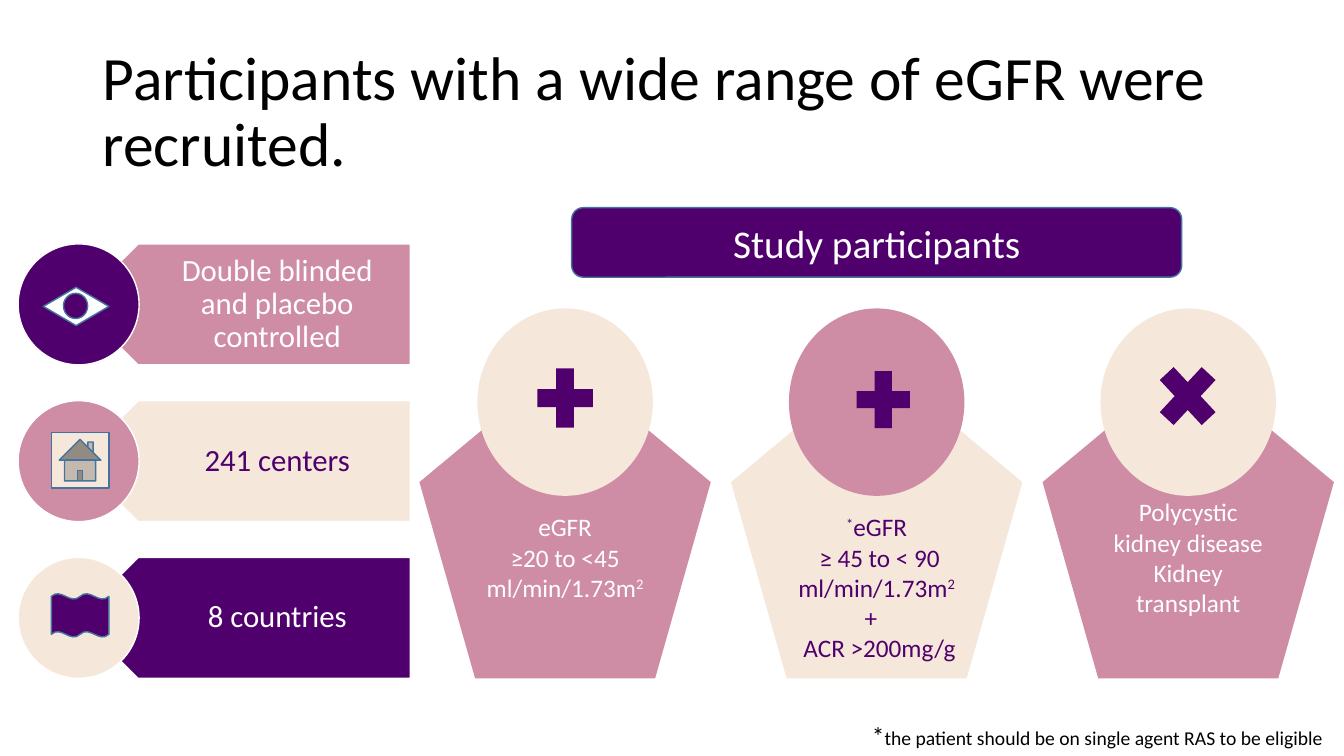
import dataclasses

import pptx
import pptx.dml.color
import pptx.enum.shapes
import pptx.enum.text
import pptx.util

Kind = pptx.enum.shapes.MSO_SHAPE
Align = pptx.enum.text.PP_ALIGN


@dataclasses.dataclass(frozen=True)
class Theme:
    font: str = "Calibri"
    plum: str = "50006C"
    rose: str = "CE8CA5"
    cream: str = "F5E8DA"
    white: str = "FFFFFF"
    black: str = "000000"
    edge: str = "43739E"
    title: int = 44
    head: int = 28
    label: int = 22
    body: int = 18
    note: int = 14


@dataclasses.dataclass(frozen=True)
class Run:
    words: str
    size: int = 0
    up: bool = False


class Board:
    """A slide laid out on square grid cells, ten to the inch."""

    cell = pptx.util.Inches(0.1)

    def __init__(self, slide, theme):
        self.slide = slide
        self.theme = theme

    def span(self, *cells):
        return [round(n * self.cell) for n in cells]

    def tint(self, code):
        return pptx.dml.color.RGBColor.from_string(code)

    def shape(self, kind, box, fill, line=None, turn=0):
        item = self.slide.shapes.add_shape(kind, *self.span(*box))
        item.shadow.inherit = False
        item.rotation = turn
        item.fill.solid()
        item.fill.fore_color.rgb = self.tint(fill)
        if line:
            item.line.color.rgb = self.tint(line)
            item.line.width = pptx.util.Pt(1)
        else:
            item.line.fill.background()
        return item

    def text(self, box, paras, size, color, **style):
        item = self.slide.shapes.add_textbox(*self.span(*box))
        self.label(item, paras, size, color, **style)

    def label(self, item, paras, size, color, align=Align.CENTER, wrap=True,
              space=1.0, pads=(1, 0.5, 1, 0.5)):
        """Fill a shape with paragraphs of runs; pads are left, top, right, bottom."""
        frame = item.text_frame
        frame.word_wrap = wrap
        frame.vertical_anchor = pptx.enum.text.MSO_ANCHOR.MIDDLE
        (frame.margin_left, frame.margin_top,
         frame.margin_right, frame.margin_bottom) = self.span(*pads)
        for i, runs in enumerate(paras):
            para = frame.paragraphs[0] if i == 0 else frame.add_paragraph()
            para.alignment = align
            para.line_spacing = space
            for part in runs:
                run = para.add_run()
                run.text = part.words
                run.font.name = self.theme.font
                run.font.size = pptx.util.Pt(part.size or size)
                run.font.color.rgb = self.tint(color)
                if part.up:
                    run._r.get_or_add_rPr().set("baseline", "30000")


def add_facts(board):
    look = board.theme
    facts = [
        ("Double blinded and placebo controlled", look.rose, look.white, look.plum),
        ("241 centers", look.cream, look.plum, look.rose),
        ("8 countries", look.plum, look.white, look.cream),
    ]
    for i, (words, fill, ink, disc) in enumerate(facts):
        top = 24.2 + 15.55 * i
        board.shape(Kind.PENTAGON, (7.7, top, 33, 12), fill, look.white, turn=180)
        board.text((10.7, top, 30, 12), [[Run(words)]], look.label, ink,
                   space=0.9, pads=(5.3, 0.9, 1.7, 0.9))
        board.shape(Kind.OVAL, (1.8, top, 12, 12), disc, look.white)


def add_groups(board):
    look = board.theme
    square = Run("2", up=True)
    low = [[Run("eGFR")], [Run("≥20 to <45 ml/min/1.73m"), square]]
    high = [
        [Run("*", up=True), Run("eGFR")],
        [Run(" ≥ 45 to < 90 ml/min/1.73m"), Run("2 ", up=True), Run("+  ")],
        [Run(" ACR >200mg/g")],
    ]
    barred = [[Run("Polycystic kidney disease")], [Run("Kidney transplant")]]
    groups = [
        (low, look.rose, look.white, look.cream, 0.5),
        (high, look.cream, look.plum, look.rose, 6.5),
        (barred, look.rose, look.white, look.cream, 0.5),
    ]
    for i, (paras, fill, ink, disc, drop) in enumerate(groups):
        left = 41.6 + 30.9 * i
        house = board.shape(Kind.REGULAR_PENTAGON, (left, 35.8, 28.9, 31.5), fill)
        board.label(house, paras, look.body, ink, pads=(1, drop, 1, 0.5))
        board.shape(Kind.FLOWCHART_CONNECTOR, (left + 5.75, 30.6, 17.4, 18.6), disc)

    signs = [
        (Kind.MATH_PLUS, (52.3, 35.5, 7.5, 8)),
        (Kind.MATH_PLUS, (84, 35.8, 7.2, 7.7)),
        (Kind.MATH_MULTIPLY, (113.8, 35, 8, 8.6)),
    ]
    for kind, box in signs:
        board.shape(kind, box, look.plum)


def add_icons(board):
    look = board.theme
    icons = [
        (Kind.ACTION_BUTTON_HOME, (5.1, 42.9, 5.7, 5.5), look.cream),
        (Kind.DOUBLE_WAVE, (5.1, 58.9, 5.7, 4.3), look.plum),
        (Kind.FLOWCHART_DECISION, (4.3, 28.5, 6.5, 3.8), look.white),
        (Kind.FLOWCHART_CONNECTOR, (6.3, 29.1, 2.4, 2.5), look.plum),
    ]
    for kind, box, fill in icons:
        board.shape(kind, box, fill, look.edge)


def main():
    deck = pptx.Presentation()
    deck.slide_width = pptx.util.Inches(13.33)
    deck.slide_height = pptx.util.Inches(7.5)
    look = Theme()
    board = Board(deck.slides.add_slide(deck.slide_layouts[6]), look)

    title = Run("Participants with a wide range of eGFR were recruited.")
    board.text((9.2, 4, 115, 14.5), [[title]], look.title, look.black,
               align=Align.LEFT, space=0.9)
    add_facts(board)
    head = board.shape(Kind.ROUNDED_RECTANGLE, (56.7, 20.6, 60.5, 6.9),
                       look.plum, look.edge)
    board.label(head, [[Run("Study participants")]], look.head, look.white)
    add_groups(board)
    add_icons(board)
    note = [Run("*", look.body),
            Run("the patient should be on single agent RAS to be eligible")]
    board.text((85.5, 71, 47.2, 4), [note], look.note, look.black,
               align=Align.LEFT, wrap=False)
    deck.save("out.pptx")


if __name__ == "__main__":
    main()
